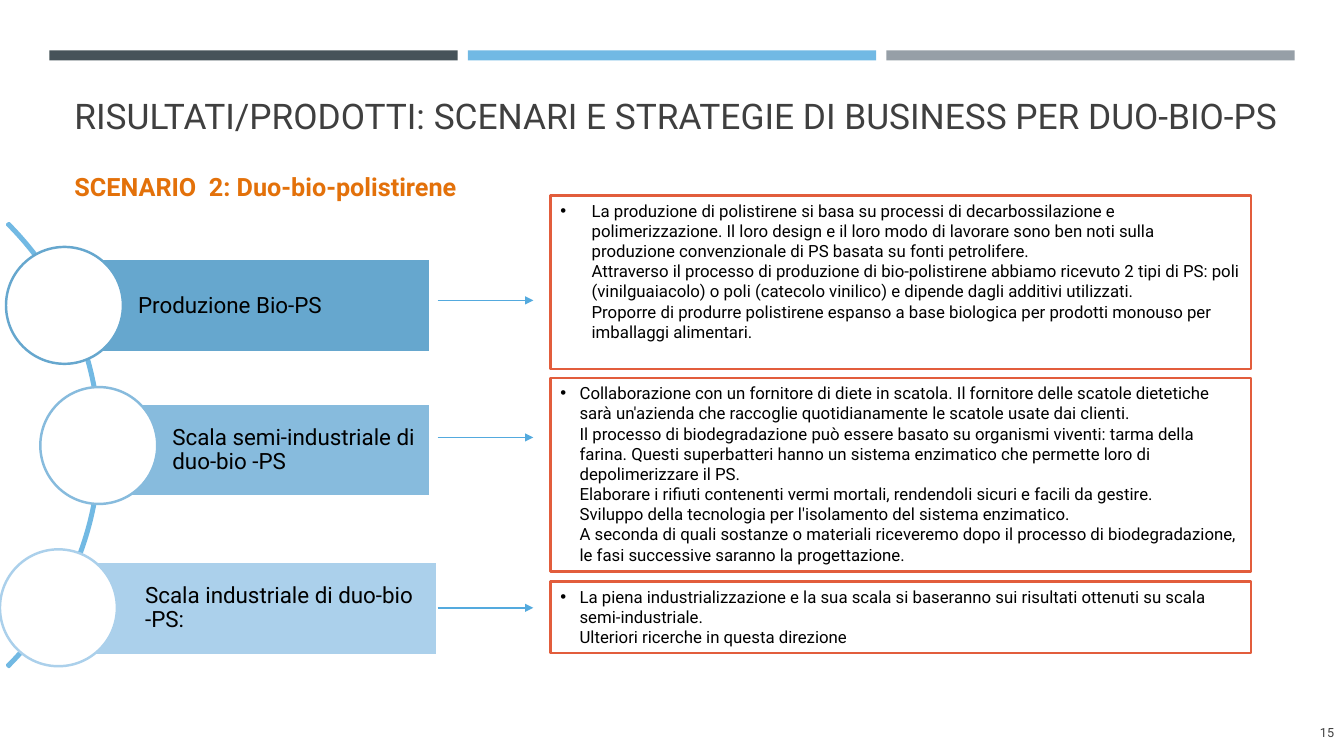
from copy import deepcopy
from lxml.etree import SubElement as Sub
from pptx import Presentation
from pptx.dml.color import RGBColor
from pptx.enum.shapes import MSO_CONNECTOR as Conn, MSO_SHAPE as Shape
from pptx.enum.text import MSO_ANCHOR as Anchor, PP_ALIGN as Align
from pptx.oxml.ns import qn
from pptx.util import Inches, Pt

FONT = "Roboto"
DARK, BLACK, WHITE = "3F3F3F", "000000", "FFFFFF"
ORANGE, RED, BLUE, SKY = "E3710A", "E25D3C", "54AADE", "72B9E3"
RULES = ["465359", "71B9E4", "969FA7"]

# Bar left, top, width; circle left, top; arrow height; colour; label
STEPS = [
    (0.64, 2.57, 3.63, 0.06, 2.45, 2.98, "66A7CE", "Produzione Bio-PS"),
    (0.98, 4.0, 3.29, 0.4, 3.84, 4.34, "87BBDD",
     "Scala semi-industriale di duo-bio -PS"),
    (0.71, 5.57, 3.63, 0, 5.45, 6.03, "ABD0EB",
     "Scala industriale di duo-bio -PS:"),
]

# Panel top, height, indent, lines
PANELS = [
    (1.94, 1.72, 0.31, [
        "La produzione di polistirene si basa su processi di decarbossilazione e "
        "polimerizzazione. Il loro design e il loro modo di lavorare sono ben noti "
        "sulla produzione convenzionale di PS basata su fonti petrolifere.",
        "Attraverso il processo di produzione di bio-polistirene abbiamo ricevuto "
        "2 tipi di PS: poli (vinilguaiacolo) o poli (catecolo vinilico) e dipende "
        "dagli additivi utilizzati.",
        "Proporre di produrre polistirene espanso a base biologica per prodotti "
        "monouso per imballaggi alimentari.",
    ]),
    (3.75, 1.92, 0.19, [
        "Collaborazione con un fornitore di diete in scatola. Il fornitore delle "
        "scatole dietetiche sarà un'azienda che raccoglie quotidianamente le "
        "scatole usate dai clienti.",
        "Il processo di biodegradazione può essere basato su organismi viventi: "
        "tarma della farina. Questi superbatteri hanno un sistema enzimatico che "
        "permette loro di depolimerizzare il PS.",
        "Elaborare i rifiuti contenenti vermi mortali, rendendoli sicuri e facili "
        "da gestire.",
        "Sviluppo della tecnologia per l'isolamento del sistema enzimatico.",
        "A seconda di quali sostanze o materiali riceveremo dopo il processo di "
        "biodegradazione, le fasi successive saranno la progettazione.",
    ]),
    (5.77, 0.71, 0.19, [
        "La piena industrializzazione e la sua scala si baseranno sui risultati "
        "ottenuti su scala semi-industriale.",
        "Ulteriori ricerche in questa direzione",
    ]),
]


def rgb(code):
    return RGBColor.from_string(code)


def draw(slide, kind, box, fill=None, line=None, width=1.75):
    shape = slide.shapes.add_shape(kind, *map(Inches, box))
    shape.shadow.inherit = False
    if fill:
        shape.fill.solid()
        shape.fill.fore_color.rgb = rgb(fill)
    else:
        shape.fill.background()
    if line:
        shape.line.color.rgb = rgb(line)
        shape.line.width = Pt(width)
    else:
        shape.line.fill.background()
    return shape


def write(shape, text, size, color, bold=False, align=Align.LEFT,
          anchor=Anchor.TOP, space=1.0, pad=(0.1, 0.05, 0.1, 0.05)):
    frame = shape.text_frame
    form = {"word_wrap": True, "vertical_anchor": anchor}
    for side, gap in zip(("left", "top", "right", "bottom"), pad):
        form["margin_" + side] = Inches(gap)
    for name, value in form.items():
        setattr(frame, name, value)
    para = frame.paragraphs[0]
    para.text = text
    para.alignment = align
    para.line_spacing = space
    for run in para.runs:
        for name, value in {"name": FONT, "size": Pt(size), "bold": bold}.items():
            setattr(run.font, name, value)
        run.font.color.rgb = rgb(color)
    # Line breaks take the format of the text
    for gap in para._p.findall(qn("a:br")):
        gap.insert(0, deepcopy(para.runs[0].font._element))
    return para


def label(slide, box, *args, **form):
    return write(slide.shapes.add_textbox(*map(Inches, box)), *args, **form)


def header(slide, left, top, width):
    # Three equal rules over the title
    gap = 0.1
    size = (width - 2 * gap) / 3
    for i, color in enumerate(RULES):
        draw(slide, Shape.RECTANGLE, (left + i * (size + gap), top, size, 0.1), color)
    label(slide, (left + 0.15, top + 0.27, 12.51, 0.63),
          "RISULTATI/PRODOTTI: SCENARI E STRATEGIE DI BUSINESS PER DUO-BIO-PS",
          25.2, DARK, anchor=Anchor.BOTTOM)
    label(slide, (left + 0.15, top + 1.12, 12.06, 0.5),
          "SCENARIO  2: Duo-bio-polistirene", 18, ORANGE, bold=True, space=1.1)


def arrow(slide, left, top, width):
    line = slide.shapes.add_connector(
        Conn.STRAIGHT, *map(Inches, (left, top, left + width, top)))
    line.line.color.rgb = rgb(BLUE)
    line.line.width = Pt(1)
    Sub(line.line._get_or_add_ln(), qn("a:tailEnd"), type="triangle")
    Sub(line._element.spPr, qn("a:effectLst"))


def steps(slide):
    # Arc behind the steps
    arc = draw(slide, Shape.BLOCK_ARC, (-5.23, 1.3, 6.23, 6.23), line=SKY)
    for i, value in enumerate((189, 27, 0.004)):
        arc.adjustments[i] = value
    # Bar, circle and arrow of each step
    for left, top, width, cx, cy, mid, color, text in STEPS:
        bar = draw(slide, Shape.RECTANGLE, (left, top, width, 0.93), color, WHITE, 2)
        write(bar, text, 16, BLACK, anchor=Anchor.MIDDLE, space=0.9,
              pad=(0.73, 0.04, 0.04, 0.04))
        draw(slide, Shape.OVAL, (cx, cy, 1.16, 1.16), WHITE, color)
        arrow(slide, 4.34, mid, 0.95)


def panels(slide, left, width):
    for top, height, indent, lines in PANELS:
        box = draw(slide, Shape.RECTANGLE, (left, top, width, height), WHITE, RED)
        para = write(box, "\v".join(lines), 12, BLACK)
        # Hanging bullet
        props = para._p.get_or_add_pPr()
        props.set("marL", str(Inches(indent)))
        props.set("indent", str(-Inches(indent)))
        Sub(Sub(props, qn("a:buClr")), qn("a:srgbClr"), val=BLACK)
        Sub(props, qn("a:buFont"), typeface="Arial")
        Sub(props, qn("a:buChar"), char="•")


def main():
    deck = Presentation()
    deck.slide_width, deck.slide_height = Inches(13.33), Inches(7.5)
    slide = deck.slides.add_slide(deck.slide_layouts[6])
    header(slide, 0.49, 0.5, 12.35)
    steps(slide)
    panels(slide, 5.46, 6.95)
    # Page number
    label(slide, (12.18, 7.07, 1.15, 0.4), "15", 9, DARK,
          align=Align.RIGHT, anchor=Anchor.MIDDLE)
    deck.save("out.pptx")


if __name__ == "__main__":
    main()
